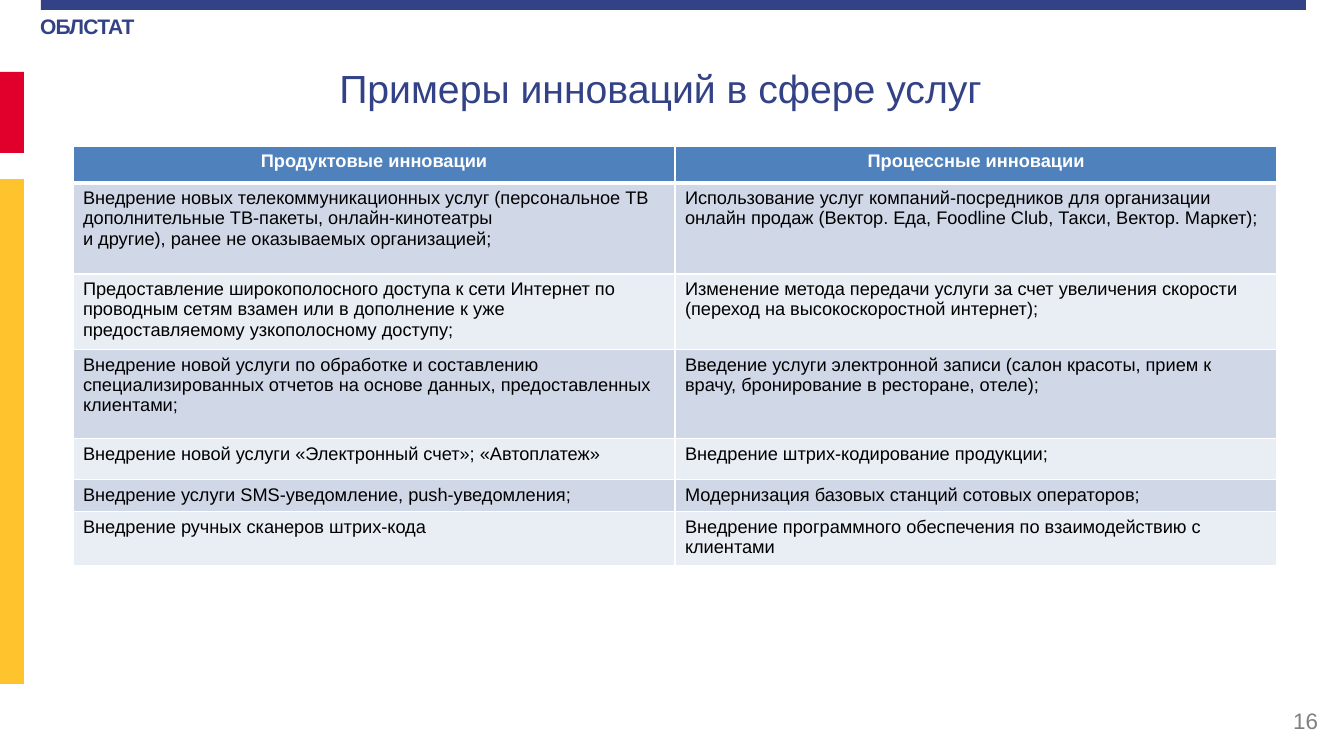
"""Build the slide with examples of innovations in services."""
from dataclasses import dataclass

from lxml.etree import SubElement
from pptx import Presentation
from pptx.dml.color import RGBColor as Rgb
from pptx.enum.shapes import MSO_SHAPE as Preset
from pptx.enum.text import MSO_ANCHOR as Anchor, MSO_AUTO_SIZE as AutoSize, PP_ALIGN as Align
from pptx.oxml.ns import qn
from pptx.util import Emu, Pt

SCALE = 914400 / 100.8


@dataclass(frozen=True)
class Theme:
    font: str = "Arial"
    navy: str = "334286"
    red: str = "E1002B"
    yellow: str = "FFC32E"
    gray: str = "808080"
    white: str = "FFFFFF"
    black: str = "000000"
    header: str = "4F81BD"
    bands: tuple[str, str] = ("D0D8E8", "E9EDF4")
    title_size: int = 28
    number_size: int = 16
    agency_size: int = 15
    table_size: int = 13


@dataclass(frozen=True)
class Area:
    left: int
    top: int
    width: int
    height: int

    def emu(self) -> tuple[Emu, ...]:
        return tuple(px(n) for n in (self.left, self.top, self.width, self.height))


@dataclass(frozen=True)
class Stripe:
    area: Area
    color: str


@dataclass(frozen=True)
class Style:
    size: int
    color: str
    bold: bool = False
    align: Align = Align.LEFT


@dataclass(frozen=True)
class Row:
    height: int
    product: str
    process: str


THEME = Theme()
STRIPES = (
    Stripe(Area(41, 0, 1265, 10), THEME.navy),
    Stripe(Area(0, 72, 24, 81), THEME.red),
    Stripe(Area(0, 179, 24, 505), THEME.yellow),
)
TABLE_AREA = Area(73, 146, 1204, 414)
ROWS = (
    Row(37, "Продуктовые инновации", "Процессные инновации"),
    Row(91, "Внедрение новых телекоммуникационных услуг (персональное ТВ дополнительные "
            "ТВ-пакеты, онлайн-кинотеатры\nи другие), ранее не оказываемых организацией;",
        "Использование услуг компаний-посредников для организации онлайн продаж "
        "(Вектор. Еда, Foodline Club, Такси, Вектор. Маркет);"),
    Row(73, "Предоставление широкополосного доступа к сети Интернет по проводным сетям "
            "взамен или в дополнение к уже предоставляемому узкополосному доступу;",
        "Изменение метода передачи услуги за счет увеличения скорости "
        "(переход на высокоскоростной интернет);"),
    Row(89, "Внедрение новой услуги по обработке и составлению специализированных отчетов "
            "на основе данных, предоставленных клиентами;",
        "Введение услуги электронной записи (салон красоты, прием к врачу, "
        "бронирование в ресторане, отеле);"),
    Row(41, "Внедрение новой услуги «Электронный счет»; «Автоплатеж»",
        "Внедрение штрих-кодирование продукции;"),
    Row(32, "Внедрение услуги SMS-уведомление, push-уведомления;",
        "Модернизация базовых станций сотовых операторов;"),
    Row(51, "Внедрение ручных сканеров штрих-кода",
        "Внедрение программного обеспечения по взаимодействию с клиентами"),
)


def px(count: int) -> Emu:
    """Turn pixels into EMU."""
    return Emu(round(count * SCALE))


def write(para, text: str, style: Style) -> None:
    """Put styled text into a paragraph."""
    para.text = text
    para.alignment = style.align
    for span in para.runs:
        span.font.name = THEME.font
        span.font.size = Pt(style.size)
        span.font.bold = style.bold
        span.font.color.rgb = Rgb.from_string(style.color)
    for line_break in para._p.findall(qn("a:br")):
        SubElement(line_break, qn("a:rPr"), sz=str(style.size * 100))


def draw_stripe(page, stripe: Stripe) -> None:
    """Draw one plain coloured stripe."""
    box = page.shapes.add_shape(Preset.RECTANGLE, *stripe.area.emu())
    box.shadow.inherit = False
    box.fill.solid()
    box.fill.fore_color.rgb = Rgb.from_string(stripe.color)
    box.line.fill.background()


def draw_title(page, text: str) -> None:
    """Fill and place the title placeholder."""
    box = page.shapes.title
    box.left, box.top, box.width, box.height = Area(32, 59, 1257, 103).emu()
    frame = box.text_frame
    frame.auto_size = AutoSize.NONE
    frame.vertical_anchor = Anchor.TOP
    para = frame.paragraphs[0]
    write(para, text, Style(THEME.title_size, THEME.navy, align=Align.CENTER))
    para.space_before = Pt(10)


def draw_agency(page, text: str) -> None:
    """Write the agency name in the top left corner."""
    frame = page.shapes.add_textbox(*Area(40, 13, 116, 32).emu()).text_frame
    frame.word_wrap = True
    frame.margin_left = frame.margin_right = frame.margin_bottom = 0
    frame.margin_top = px(1)
    para = frame.paragraphs[0]
    write(para, text, Style(THEME.agency_size, THEME.navy, bold=True))
    para.space_before = Pt(1)
    para.runs[0].font._element.set("spc", "-50")


def draw_number(page, text: str) -> None:
    """Write the page number in the bottom right corner."""
    frame = page.shapes.add_textbox(*Area(1026, 701, 302, 40).emu()).text_frame
    frame.word_wrap = True
    frame.vertical_anchor = Anchor.MIDDLE
    write(frame.paragraphs[0], text, Style(THEME.number_size, THEME.gray, align=Align.RIGHT))


def draw_borders(cell, top: int, bottom: int) -> None:
    """Give a cell white borders, with top and bottom widths in points."""
    properties = cell._tc.get_or_add_tcPr()
    for side, width in (("L", 1), ("R", 1), ("T", top), ("B", bottom)):
        line = SubElement(properties, qn(f"a:ln{side}"), w=str(Pt(width)))
        fill = SubElement(line, qn("a:solidFill"))
        SubElement(fill, qn("a:srgbClr"), val=THEME.white)


def draw_table(page, rows: tuple[Row, ...]) -> None:
    """Draw the table of innovations."""
    table = page.shapes.add_table(len(rows), 2, *TABLE_AREA.emu()).table
    for column in table.columns:
        column.width = px(TABLE_AREA.width // 2)
    heading = Style(THEME.table_size, THEME.white, bold=True, align=Align.CENTER)
    body = Style(THEME.table_size, THEME.black)
    for index, row in enumerate(rows):
        table.rows[index].height = px(row.height)
        color = THEME.bands[(index - 1) % 2] if index else THEME.header
        for side, text in enumerate((row.product, row.process)):
            cell = table.cell(index, side)
            draw_borders(cell, top=3 if index == 1 else 1, bottom=1 if index else 3)
            cell.fill.solid()
            cell.fill.fore_color.rgb = Rgb.from_string(color)
            write(cell.text_frame.paragraphs[0], text, body if index else heading)


def main() -> None:
    """Build and save the deck."""
    deck = Presentation()
    deck.slide_width, deck.slide_height = px(1344), px(756)
    page = deck.slides.add_slide(deck.slide_layouts[5])
    draw_agency(page, "ОБЛСТАТ")
    for stripe in STRIPES:
        draw_stripe(page, stripe)
    draw_number(page, "16")
    draw_title(page, "Примеры инноваций в сфере услуг")
    draw_table(page, ROWS)
    deck.save("out.pptx")


if __name__ == "__main__":
    main()
